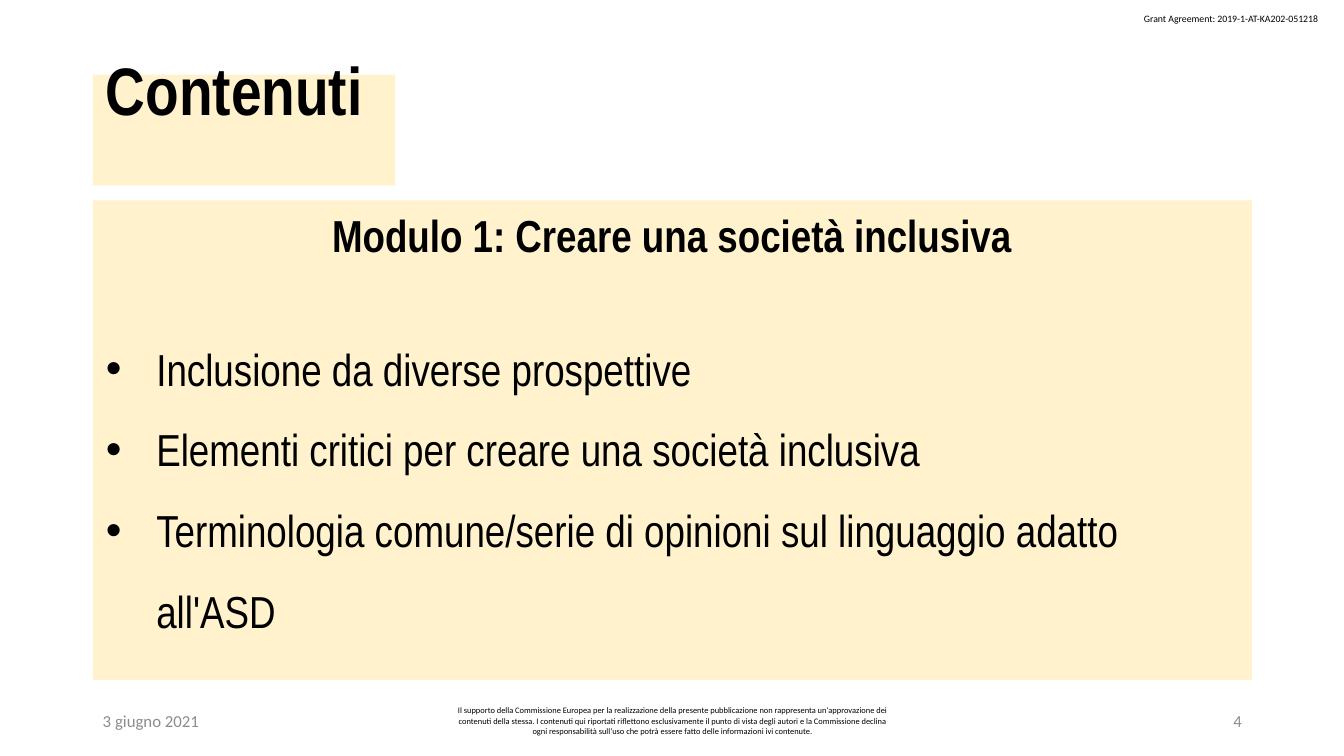
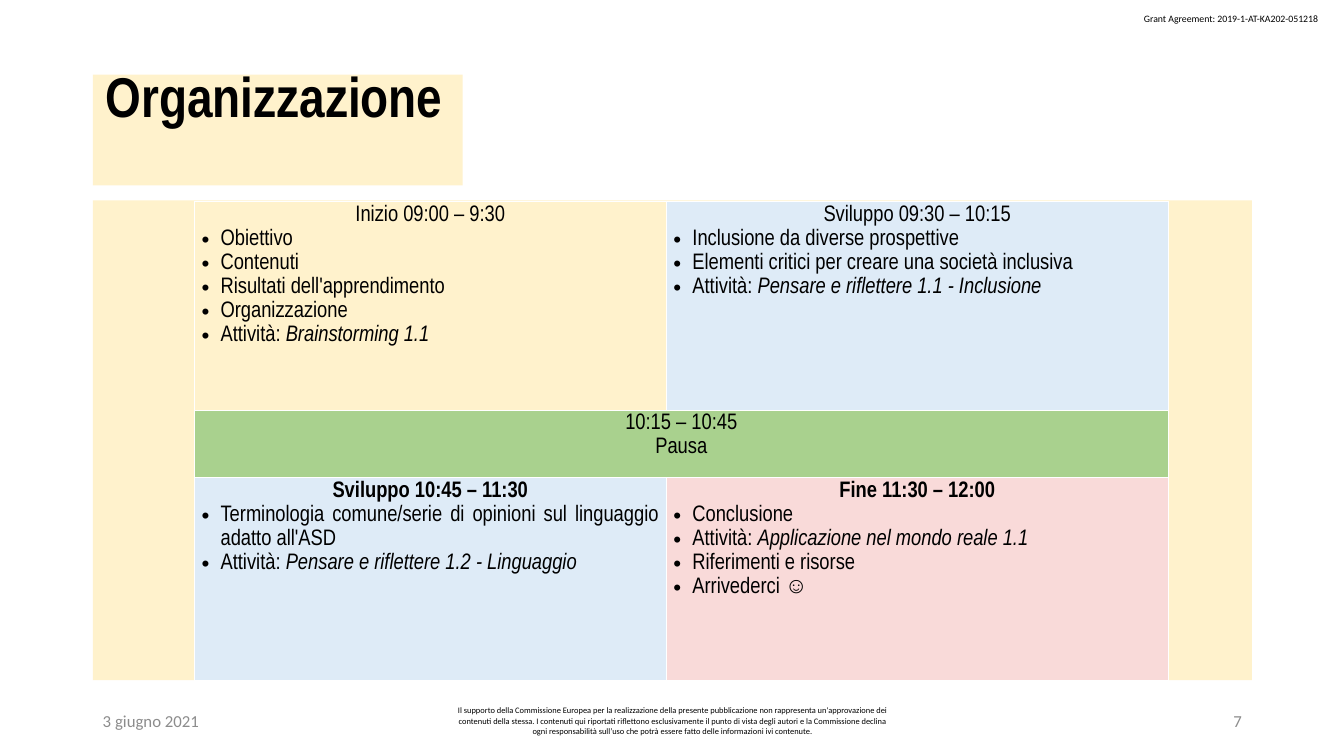
from lxml.etree import SubElement as Sub
from pptx import Presentation
from pptx.dml.color import RGBColor
from pptx.enum.shapes import MSO_SHAPE as Shape
from pptx.enum.text import MSO_ANCHOR as Anchor, MSO_AUTO_SIZE as Auto, PP_ALIGN as Align
from pptx.oxml.ns import qn
from pptx.util import Cm, Pt

# Shared look
CREAM, BLUE, GREEN, PINK = "FFF2CC", "DEEBF7", "A9D18E", "F9DAD9"
BLACK, GREY = "000000", "8C8C8C"
HEAD, BODY = "Arial Narrow", "Calibri"
LEFT, WIDE, TOP, HIGH = 2.34, 29.21, 5.05, 12.09
PAD, EDGE = 0.33, 0.18
FOOT, FOOT_H, SIDE = 17.65, 1.02, 7.62

GRANT = "Grant Agreement: 2019-1-AT-KA202-051218"
DATE = "3 giugno 2021"
NOTICE = (
    "Il supporto della Commissione Europea per la realizzazione della presente "
    "pubblicazione non rappresenta un'approvazione dei contenuti della stessa. "
    "I contenuti qui riportati riflettono esclusivamente il punto di vista degli "
    "autori e la Commissione declina ogni responsabilità sull’uso che potrà "
    "essere fatto delle informazioni ivi contenute."
)

# Slide content
TOPICS = [
    "Inclusione da diverse prospettive",
    "Elementi critici per creare una società inclusiva",
    "Terminologia comune/serie di opinioni sul linguaggio adatto all'ASD",
]
# Row, column, fill, heading, bold heading, item alignment, items (italic after the bar)
PLAN = [
    (0, 0, CREAM, "Inizio 09:00 – 9:30", False, Align.LEFT,
     ["Obiettivo", "Contenuti", "Risultati dell'apprendimento", "Organizzazione",
      "Attività: |Brainstorming 1.1"]),
    (0, 1, BLUE, "Sviluppo 09:30 – 10:15", False, Align.JUSTIFY,
     [*TOPICS[:2], "Attività: |Pensare e riflettere 1.1 - Inclusione"]),
    (2, 0, BLUE, "Sviluppo 10:45 – 11:30", True, Align.JUSTIFY,
     [TOPICS[2], "Attività: |Pensare e riflettere 1.2 - Linguaggio"]),
    (2, 1, PINK, "Fine 11:30 – 12:00", True, Align.LEFT,
     ["Conclusione", "Attività: |Applicazione nel mondo reale 1.1",
      "Riferimenti e risorse", "Arrivederci ☺"]),
]


def rgb(code):
    return RGBColor.from_string(code)


def paint(thing, code):
    thing.fill.solid()
    thing.fill.fore_color.rgb = rgb(code)


def style(para, size, font=HEAD, color=BLACK, bold=False, align=Align.LEFT):
    para.alignment = align
    for run in para.runs:
        run.font.size, run.font.name, run.font.bold = Pt(size), font, bold
        run.font.color.rgb = rgb(color)


def bullet(para, dent):
    props = para._p.get_or_add_pPr()
    props.set("marL", str(Cm(dent)))
    props.set("indent", str(-Cm(dent)))
    Sub(props, qn("a:buFont")).set("typeface", "Arial")
    Sub(props, qn("a:buChar")).set("char", "•")


def inset(frame, bottom=EDGE):
    frame.margin_left = frame.margin_right = Cm(PAD)
    frame.margin_top, frame.margin_bottom = Cm(EDGE), Cm(bottom)


def label(slide, x, y, w, h, text, size, color=BLACK, align=Align.LEFT, wrap=True):
    frame = slide.shapes.add_textbox(Cm(x), Cm(y), Cm(w), Cm(h)).text_frame
    frame.word_wrap = wrap
    frame.vertical_anchor = Anchor.MIDDLE if wrap else Anchor.TOP
    frame.text = text
    style(frame.paragraphs[0], size, BODY, color, align=align)


def page(deck, title, width, size, number):
    """Add a slide with its title band, grant line and footer."""
    slide = deck.slides.add_slide(deck.slide_layouts[5])
    label(slide, 28.58, 0.2, 5, 0.56, GRANT, 7, wrap=False)
    label(slide, LEFT, FOOT, SIDE, FOOT_H, DATE, 12, GREY)
    label(slide, 11.23, FOOT, 11.43, FOOT_H, NOTICE, 6, align=Align.CENTER)
    label(slide, LEFT + WIDE - SIDE, FOOT, SIDE, FOOT_H, number, 12, GREY, Align.RIGHT)

    band = slide.shapes.title
    band.left, band.top, band.width, band.height = Cm(LEFT), Cm(1.88), Cm(width), Cm(2.79)
    paint(band, CREAM)
    frame = band.text_frame
    frame.auto_size, frame.word_wrap = Auto.NONE, True
    frame.vertical_anchor = Anchor.MIDDLE
    # One line of room below lifts the title to the top of its band
    inset(frame, EDGE + Pt(size * 1.08).cm)
    frame.text = title
    frame.paragraphs[0].line_spacing = 0.9
    style(frame.paragraphs[0], size, bold=True)
    return slide


def panel(slide):
    box = slide.shapes.add_shape(Shape.RECTANGLE, Cm(LEFT), Cm(TOP), Cm(WIDE), Cm(HIGH))
    box.shadow.inherit = False
    paint(box, CREAM)
    box.line.fill.background()
    return box.text_frame


def topics(slide):
    frame = panel(slide)
    frame.word_wrap, frame.vertical_anchor = True, Anchor.TOP
    inset(frame)
    frame.text = "Modulo 1: Creare una società inclusiva"
    style(frame.paragraphs[0], 32, bold=True, align=Align.CENTER)
    for i, text in enumerate(TOPICS):
        para = frame.add_paragraph()
        para.text = text
        para.line_spacing = 1.5
        para.space_before = Pt(0 if i else 38)
        bullet(para, 1.27)
        style(para, 32)


def fill(cell, color, head, bold):
    paint(cell, color)
    cell.margin_left = cell.margin_right = Cm(EDGE)
    cell.margin_top = cell.margin_bottom = 0
    cell.text = head
    for para in cell.text_frame.paragraphs:
        para.line_spacing = 1.15
        style(para, 16, bold=bold, align=Align.CENTER)


def item(cell, text, align):
    para = cell.text_frame.add_paragraph()
    para.line_spacing = 1.15
    bullet(para, 0.48)
    plain, _, slant = text.partition("|")
    para.text = plain
    if slant:
        run = para.add_run()
        run.text = slant
        run.font.italic = True
    style(para, 16, align=align)


def agenda(slide):
    panel(slide)
    cols, rows = (11.89, 12.65), (5.26, 1.7, 5.1)
    grid = slide.shapes.add_table(
        len(rows), len(cols), Cm(4.9), Cm(5.08), Cm(sum(cols)), Cm(sum(rows))).table
    grid.first_row = grid.horz_banding = False
    for col, width in zip(grid.columns, cols):
        col.width = Cm(width)
    for row, height in zip(grid.rows, rows):
        row.height = Cm(height)
    for row, col, color, head, bold, align, items in PLAN:
        cell = grid.cell(row, col)
        fill(cell, color, head, bold)
        for text in items:
            item(cell, text, align)
    # Break across both columns
    rest = grid.cell(1, 0)
    rest.merge(grid.cell(1, 1))
    fill(rest, GREEN, "10:15 – 10:45\nPausa", False)


def main():
    deck = Presentation()
    deck.slide_width, deck.slide_height = Cm(33.87), Cm(19.05)
    topics(page(deck, "Contenuti", 7.62, 48, "4"))
    agenda(page(deck, "Organizzazione", 9.32, 40, "7"))
    deck.save("out.pptx")


if __name__ == "__main__":
    main()
